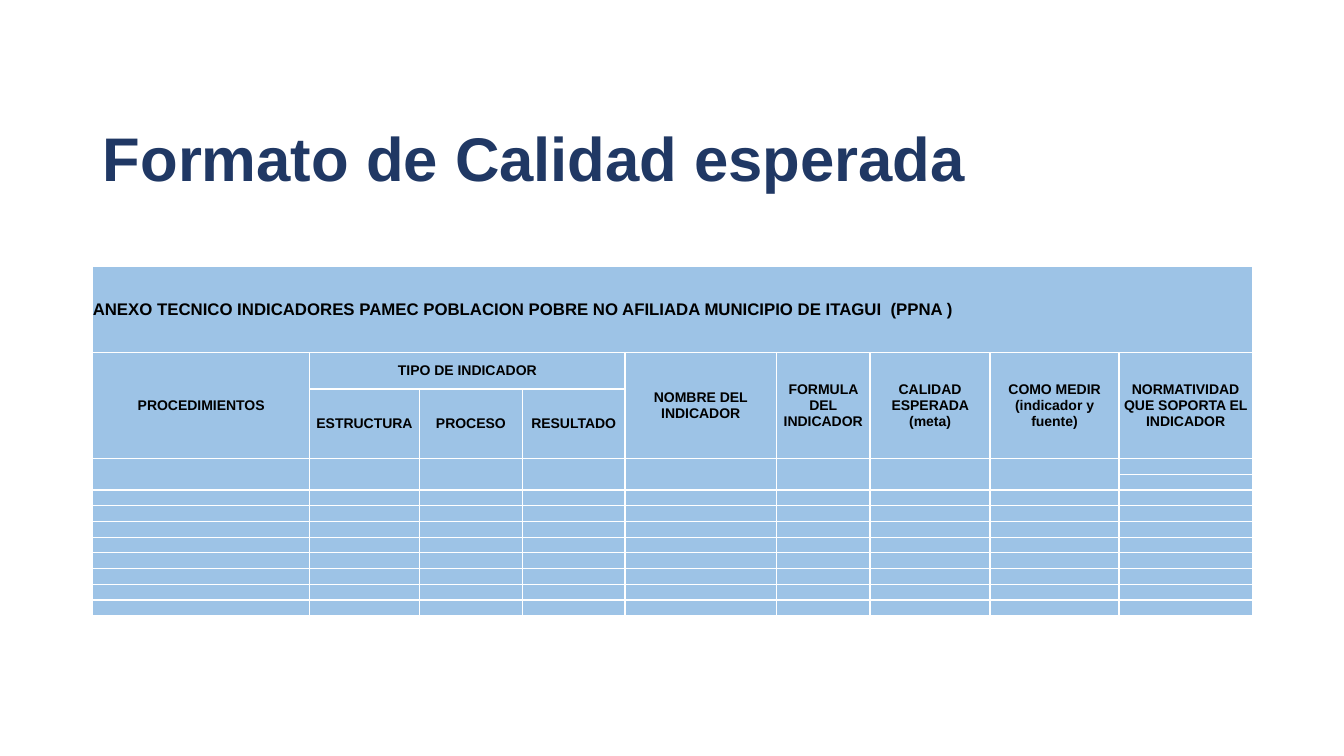
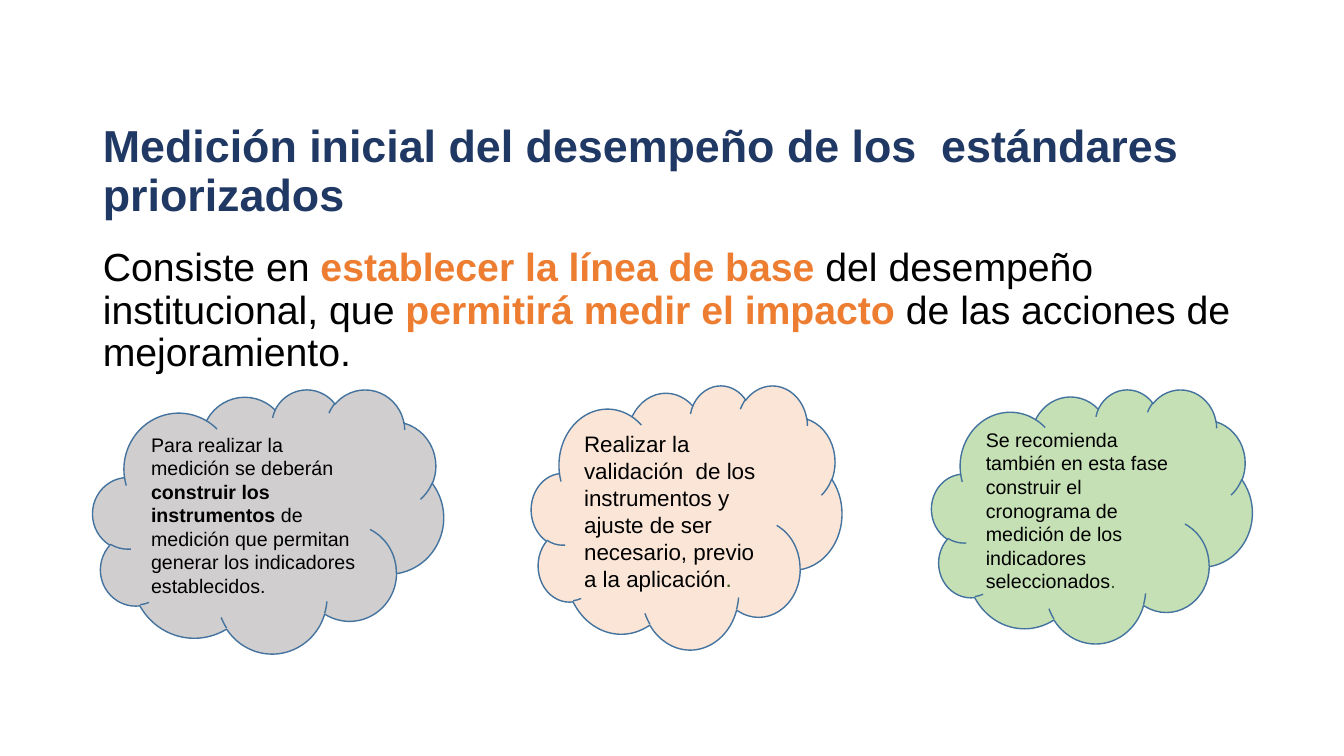
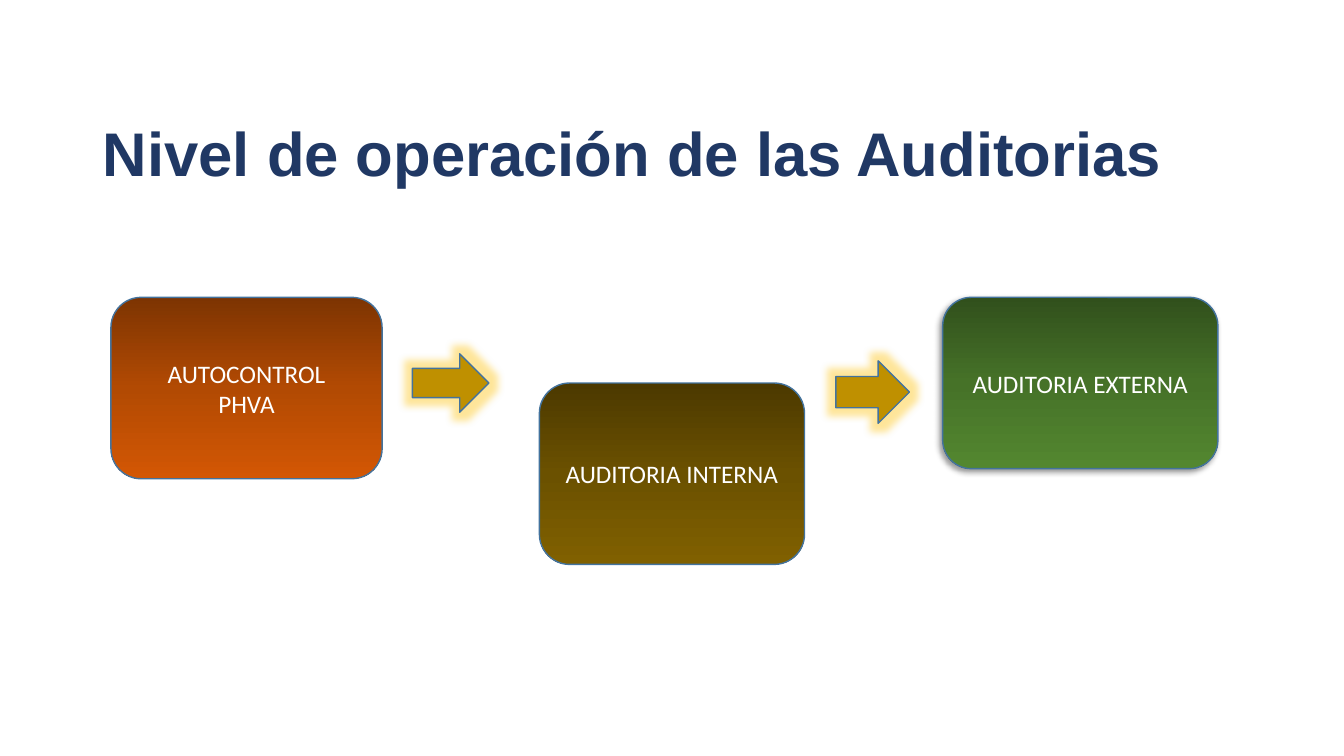
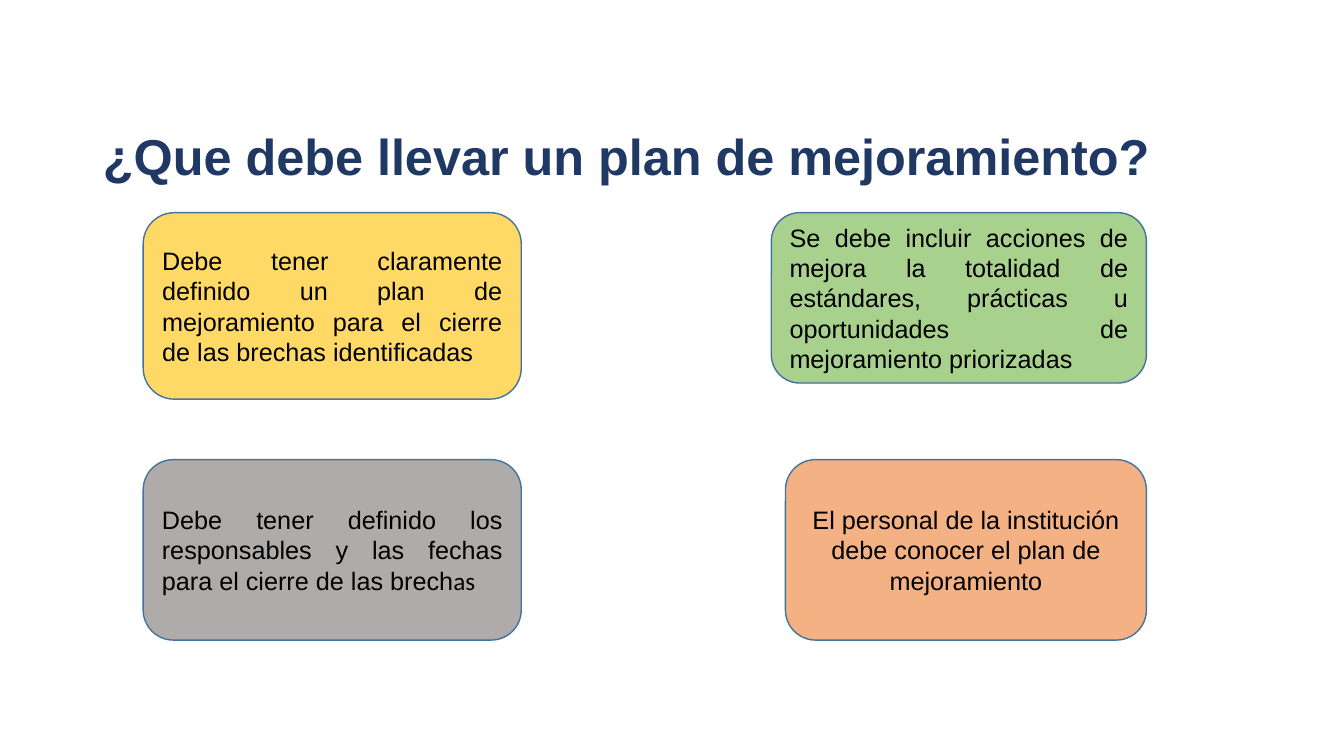
from dataclasses import dataclass

from lxml import etree
from pptx import Presentation
from pptx.dml.color import RGBColor
from pptx.enum.shapes import MSO_SHAPE
from pptx.enum.text import MSO_ANCHOR, MSO_AUTO_SIZE, PP_ALIGN
from pptx.oxml.ns import qn
from pptx.util import Inches, Pt

LEFT, CENTER, JUSTIFY = PP_ALIGN.LEFT, PP_ALIGN.CENTER, PP_ALIGN.JUSTIFY
TOP, MIDDLE, BOTTOM = MSO_ANCHOR.TOP, MSO_ANCHOR.MIDDLE, MSO_ANCHOR.BOTTOM
NO_FIT = MSO_AUTO_SIZE.NONE
CLOUD, ROUNDED, ARROW = MSO_SHAPE.CLOUD, MSO_SHAPE.ROUNDED_RECTANGLE, MSO_SHAPE.RIGHT_ARROW
TITLE_AND_BODY, TITLE_ONLY = 1, 5


@dataclass(frozen=True)
class Theme:
    font: str = "Arial"
    label_font: str = "Calibri"
    title: str = "203864"
    text: str = "000000"
    white: str = "FFFFFF"
    accent: str = "ED7D31"
    dot: str = "385723"
    outline: str = "43739E"
    cell: str = "9DC3E6"
    arrow: str = "BF9000"
    glow: str = "FFC000"
    title_size: int = 44
    body_size: int = 28
    label_size: int = 18
    note_size: int = 14
    banner_size: int = 12
    head_size: int = 10
    empty_size: int = 8
    margin: float = 0.92
    width: float = 11.5


T = Theme()


def rgb(value):
    return RGBColor.from_string(value)


def box_of(box):
    return [Inches(v) for v in box]


def write(tf, *paragraphs, size=T.label_size, font=T.font, color=T.text, bold=False,
          align=LEFT, anchor=MIDDLE, spacing=1.0):
    tf.word_wrap = True
    tf.vertical_anchor = anchor
    for i, runs in enumerate(paragraphs):
        p = tf.add_paragraph() if i else tf.paragraphs[0]
        p.alignment, p.line_spacing, p.space_before = align, spacing, Pt(0)
        for run in [(runs, {})] if isinstance(runs, str) else runs:
            text, own = run
            r = p.add_run()
            r.text = text
            r.font.size = Pt(size)
            r.font.name = own.get("font", font)
            r.font.bold = own.get("bold", bold)
            r.font.color.rgb = rgb(own.get("color", color))


def place(sp, box):
    sp.left, sp.top, sp.width, sp.height = box_of(box)


def add_slide(prs, layout, title, top, height, size=T.title_size, anchor=MIDDLE, inset=0.05):
    s = prs.slides.add_slide(prs.slide_layouts[layout])
    place(s.shapes.title, (T.margin, top, T.width, height))
    tf = s.shapes.title.text_frame
    tf.auto_size = NO_FIT
    tf.margin_top = tf.margin_bottom = Inches(inset)
    write(tf, title, size=size, color=T.title, bold=True, anchor=anchor, spacing=0.9)
    return s


def add_effect(sp, name, color, alpha, **attrs):
    effects = sp._element.spPr.find(qn("a:effectLst"))
    effect = etree.SubElement(effects, qn(name), attrs)
    clr = etree.SubElement(effect, qn("a:srgbClr"), val=color)
    etree.SubElement(clr, qn("a:alpha"), val=str(alpha * 1000))


def fill_gradient(sp, colors):
    sp.fill.gradient()
    sp.fill.gradient_angle = 270
    stops = next(sp._element.spPr.iter(qn("a:gsLst")))
    stops.clear()
    for i, color in enumerate(colors):
        stop = etree.SubElement(stops, qn("a:gs"), pos=str(i * 50000))
        etree.SubElement(stop, qn("a:srgbClr"), val=color)


def add_box(s, kind, box, fill, *paragraphs, **fmt):
    sp = s.shapes.add_shape(kind, *box_of(box))
    sp.shadow.inherit = False
    if isinstance(fill, str):
        sp.fill.solid()
        sp.fill.fore_color.rgb = rgb(fill)
    else:
        fill_gradient(sp, fill)
    sp.line.color.rgb = rgb(T.outline)
    sp.line.width = Pt(1)
    if paragraphs:
        write(sp.text_frame, *paragraphs, **fmt)
    return sp


def style_cell(cell):
    tc_pr = cell._tc.get_or_add_tcPr()
    for side in ("a:lnL", "a:lnR", "a:lnT", "a:lnB"):
        ln = etree.SubElement(tc_pr, qn(side), w=str(Pt(1)))
        fill = etree.SubElement(ln, qn("a:solidFill"))
        etree.SubElement(fill, qn("a:srgbClr"), val=T.white)
    cell.fill.solid()
    cell.fill.fore_color.rgb = rgb(T.cell)
    cell.margin_left = cell.margin_right = cell.margin_top = cell.margin_bottom = 0
    cell.vertical_anchor = MIDDLE


def add_indicator_table(s, box, banner, heads, widths, heights):
    table = s.shapes.add_table(len(heights), len(widths), *box_of(box)).table
    table.first_row = table.horz_banding = False
    for col, width in zip(table.columns, widths):
        col.width = Inches(width)
    for row, height in zip(table.rows, heights):
        row.height = Inches(height)
    for cell in table.iter_cells():
        style_cell(cell)
    last = len(widths) - 1
    table.cell(0, 0).merge(table.cell(0, last))
    table.cell(1, 1).merge(table.cell(1, 3))
    for c in (0, *range(4, last + 1)):
        table.cell(1, c).merge(table.cell(2, c))
    for c in range(last):
        table.cell(3, c).merge(table.cell(4, c))
    write(table.cell(0, 0).text_frame, banner, size=T.banner_size, bold=True)
    for (r, c), text in heads.items():
        write(table.cell(r, c).text_frame, text, size=T.head_size, bold=True, align=CENTER)
    for cell in table.iter_cells():
        if not cell.text:
            etree.SubElement(cell.text_frame.paragraphs[0]._p, qn("a:endParaRPr"),
                             sz=str(T.empty_size * 100))


def expected_quality(prs):
    s = add_slide(prs, TITLE_ONLY, "Formato de Calidad esperada", 0.4, 2.4)
    heads = {
        (1, 0): "PROCEDIMIENTOS",
        (1, 1): "TIPO DE INDICADOR",
        (1, 4): "NOMBRE DEL INDICADOR",
        (1, 5): "FORMULA DEL INDICADOR",
        (1, 6): "CALIDAD ESPERADA (meta)",
        (1, 7): "COMO MEDIR (indicador y fuente)",
        (1, 8): "NORMATIVIDAD QUE SOPORTA EL INDICADOR",
        (2, 1): "ESTRUCTURA",
        (2, 2): "PROCESO",
        (2, 3): "RESULTADO",
    }
    add_indicator_table(
        s, (T.margin, 2.64, T.width, 3.47),
        "ANEXO TECNICO INDICADORES PAMEC POBLACION POBRE NO AFILIADA MUNICIPIO DE ITAGUI  (PPNA )",
        heads, [2.15, 1.09, 1.02, 1.02, 1.5, 0.93, 1.19, 1.28, 1.32],
        [0.86, 0.36, 0.69] + [0.156] * 10)


def initial_measurement(prs):
    s = add_slide(prs, TITLE_AND_BODY,
                  "Medición inicial del desempeño de los  estándares priorizados",
                  1.23, 1.45, size=32, anchor=TOP, inset=0)
    body = s.placeholders[1]
    place(body, (T.margin, 2.41, T.width, 3.97))
    tf = body.text_frame
    tf.auto_size = NO_FIT
    p_pr = tf.paragraphs[0]._p.get_or_add_pPr()
    p_pr.set("marL", "0")
    p_pr.set("indent", "0")
    etree.SubElement(p_pr, qn("a:buNone"))
    strong = {"color": T.accent, "bold": True}
    write(tf, [("Consiste en ", {}), ("establecer la línea de base ", strong),
               ("del desempeño institucional, que ", {}),
               ("permitirá medir el impacto ", strong),
               ("de las acciones de mejoramiento.", {})],
          size=T.body_size, anchor=TOP, spacing=0.9)
    dot = (".", {"color": T.dot})
    clouds = [
        ((0.92, 3.86, 3.48, 2.62), "D0CECE", T.note_size,
         [("Para realizar la medición se deberán ", {}),
          ("construir los instrumentos", {"bold": True}),
          (" de medición que permitan generar los indicadores establecidos.", {})]),
        ((5.27, 3.82, 3.08, 2.62), "FBE5D6", 16,
         [("Realizar la validación  de los instrumentos y ajuste de ser necesario, "
           "previo a la aplicación", {}), dot]),
        ((9.24, 3.86, 3.18, 2.52), "C5E0B4", T.note_size,
         [("Se recomienda también en esta fase construir el cronograma de medición "
           "de los indicadores seleccionados", {}), dot]),
    ]
    for box, fill, size, runs in clouds:
        add_box(s, CLOUD, box, fill, runs, size=size)


def audit_levels(prs):
    s = add_slide(prs, TITLE_ONLY, "Nivel de operación de las Auditorias", 0.4, 1.7,
                  anchor=BOTTOM, inset=0.22)
    levels = [
        ((1.1, 2.95, 2.69, 1.8), ("7D3402", "B24A03", "D35704"), ["AUTOCONTROL", "PHVA"]),
        ((5.35, 3.8, 2.63, 1.8), ("4C3900", "6B5100", "806000"), ["AUDITORIA INTERNA"]),
        ((9.35, 2.95, 2.73, 1.7), ("31501C", "467228", "538730"), ["AUDITORIA EXTERNA"]),
    ]
    for box, colors, lines in levels:
        sp = add_box(s, ROUNDED, box, colors, *lines, font=T.label_font, color=T.white,
                     align=CENTER)
    add_effect(sp, "a:outerShdw", T.text, 40, blurRad=str(Pt(4)), dist=str(Pt(3)),
               dir="8100000", algn="tr", rotWithShape="0")
    for box in ((4.09, 3.51, 0.76, 0.58), (8.29, 3.58, 0.73, 0.62)):
        arrow = add_box(s, ARROW, box, T.arrow)
        add_effect(arrow, "a:glow", T.glow, 40, rad=str(Pt(11)))


def improvement_plan(prs):
    s = add_slide(prs, TITLE_ONLY, "¿Que debe llevar un plan de mejoramiento?", 0.2, 1.65,
                  size=36, anchor=BOTTOM, inset=0)
    cards = [
        ((1.42, 2.11, 3.75, 1.85), "FFD966", JUSTIFY,
         "Debe tener claramente definido un plan de mejoramiento para el cierre de las "
         "brechas identificadas"),
        ((7.65, 2.11, 3.72, 1.69), "A9D18E", JUSTIFY,
         "Se debe incluir acciones de mejora la totalidad de estándares, prácticas u "
         "oportunidades de mejoramiento priorizadas"),
        ((1.42, 4.56, 3.75, 1.79), "AFABAB", JUSTIFY,
         [("Debe tener definido los responsables y las fechas para el cierre de las brech", {}),
          ("as", {"font": T.label_font})]),
        ((7.79, 4.56, 3.58, 1.79), "F4B183", CENTER,
         "El personal de la institución debe conocer el plan de mejoramiento"),
    ]
    for box, fill, align, text in cards:
        add_box(s, ROUNDED, box, fill, text, align=align)


def main():
    prs = Presentation()
    prs.slide_width, prs.slide_height = Inches(13.33), Inches(7.5)
    for build in (expected_quality, initial_measurement, audit_levels, improvement_plan):
        build(prs)
    prs.save("out.pptx")


if __name__ == "__main__":
    main()
